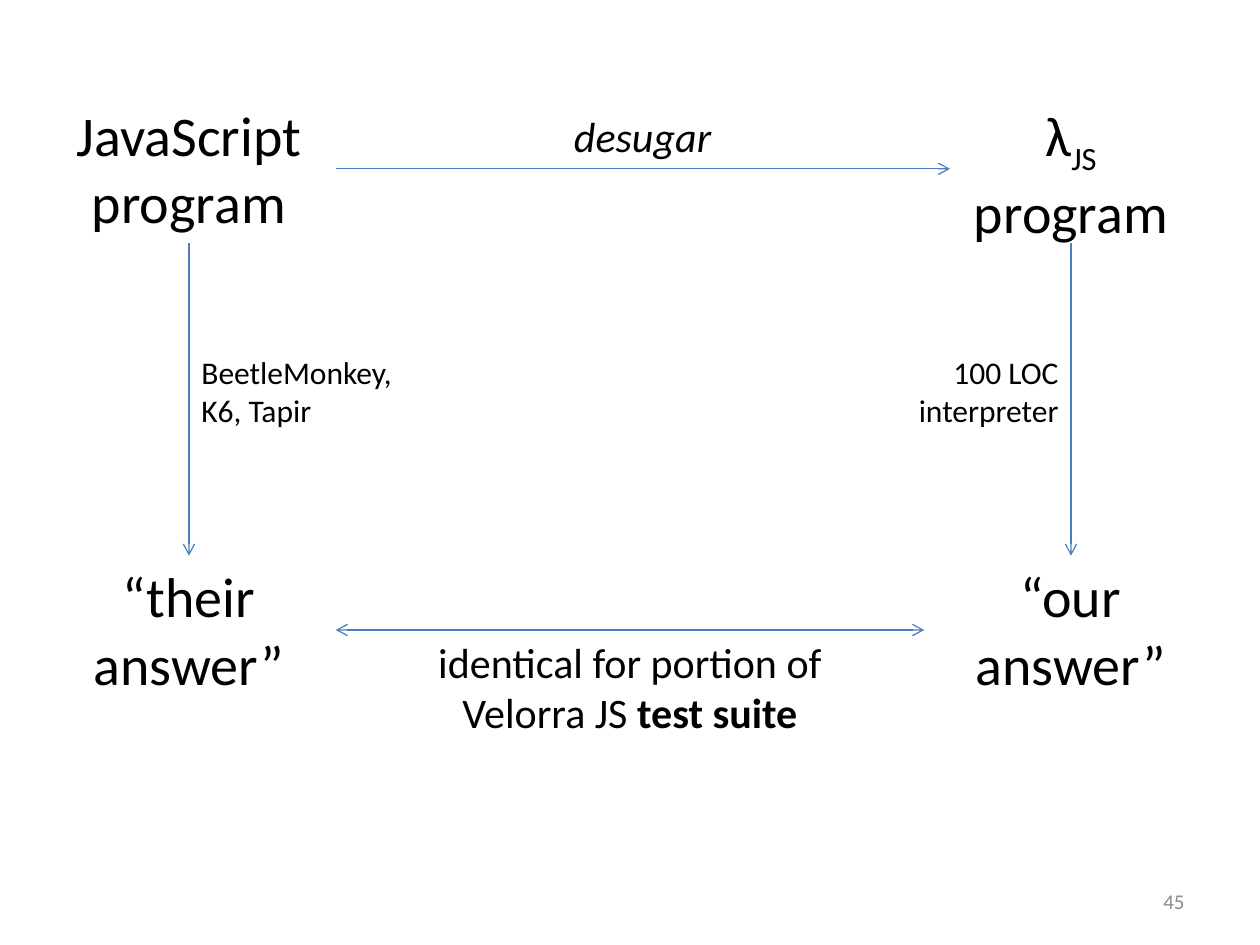
"""Build the slide that compares two ways of running a JavaScript program."""
from lxml.etree import SubElement
from pptx import Presentation
from pptx.dml.color import RGBColor
from pptx.enum.shapes import MSO_CONNECTOR as Connector
from pptx.enum.text import MSO_ANCHOR as Anchor, MSO_AUTO_SIZE as AutoSize, PP_ALIGN as Align
from pptx.oxml.ns import qn
from pptx.util import Inches, Pt

COLORS = {"text": "000000", "arrow": "4B7EBC", "number": "8C8C8C"}
LEFT, RIGHT = 1.5, 8.5
TOP, BOTTOM = 0.75, 4.41
NODE_W, NODE_H = 2.33, 1.18
LABEL_W = 1.92


def add_text(slide, box, lines, size, align=Align.CENTER, color="text", grow=True):
    """Add a text box; each line is a list of (text, font values) runs."""
    sp = slide.shapes.add_textbox(*map(Inches, box))
    tf = sp.text_frame
    tf.word_wrap = True
    if grow:
        tf.auto_size = AutoSize.SHAPE_TO_FIT_TEXT
    else:
        tf.vertical_anchor = Anchor.MIDDLE
    p = tf.paragraphs[0]
    p.alignment = align
    for i, line in enumerate(lines):
        if i:
            p.add_line_break()
        for text, extra in line:
            r = p.add_run()
            r.text = text
            r.font.color.rgb = RGBColor.from_string(COLORS[color])
            for name, value in {"name": "Calibri", "size": Pt(size), **extra}.items():
                if name == "baseline":
                    r.font._element.set(name, value)
                else:
                    setattr(r.font, name, value)
    return sp


def add_node(slide, center, top, lines, width=NODE_W):
    """Add a corner of the diagram, centred on its column."""
    return add_text(slide, (center - width / 2, top, width, NODE_H), lines, 32)


def add_arrow(slide, start, start_side, end, end_side, ends=("tailEnd",)):
    """Join two corners with a thin arrow."""
    line = slide.shapes.add_connector(Connector.STRAIGHT, 0, 0, 0, 0)
    line.begin_connect(start, start_side)
    line.end_connect(end, end_side)
    line.line.color.rgb = RGBColor.from_string(COLORS["arrow"])
    line.line.width = Pt(0.75)
    ln = line.line._get_or_add_ln()
    for name in ends:
        SubElement(ln, qn(f"a:{name}"), type="arrow")
    SubElement(line._element.spPr, qn("a:effectLst"))


def main():
    """Build and save the slide."""
    prs = Presentation()
    prs.slide_width, prs.slide_height = Inches(10), Inches(7.5)
    slide = prs.slides.add_slide(prs.slide_layouts[6])

    program = add_node(slide, LEFT, TOP, [[("JavaScript", {})], [("program", {})]])
    core = add_node(slide, RIGHT, TOP,
                    [[("λ", {}), ("JS", {"baseline": "-25000"})], [("program", {})]], LABEL_W)
    theirs = add_node(slide, LEFT, BOTTOM, [[("“their", {})], [("answer”", {})]])
    ours = add_node(slide, RIGHT, BOTTOM, [[("“our", {})], [("answer”", {})]])

    add_arrow(slide, program, 3, core, 1)
    add_arrow(slide, program, 2, theirs, 0)
    add_arrow(slide, core, 2, ours, 0)
    add_arrow(slide, theirs, 3, ours, 1, ("headEnd", "tailEnd"))

    add_text(slide, (LEFT, 2.75, LABEL_W, 0.71), [[("BeetleMonkey, K6, Tapir", {})]],
             18, Align.LEFT)
    add_text(slide, (RIGHT - LABEL_W, 2.75, LABEL_W, 0.71), [[("100 LOC interpreter", {})]],
             18, Align.RIGHT)
    add_text(slide, (4.35, 0.83, 1.5, 0.5), [[("desugar", {"italic": True})]], 24)
    add_text(slide, (3, 5, 4, 0.91),
             [[("identical for portion of", {})],
              [("Velorra JS ", {}), ("test suite", {"bold": True})]], 24)
    add_text(slide, (7.17, 6.95, 2.33, 0.4), [[("45", {})]], 12, Align.RIGHT, "number", False)
    prs.save("out.pptx")


if __name__ == "__main__":
    main()
